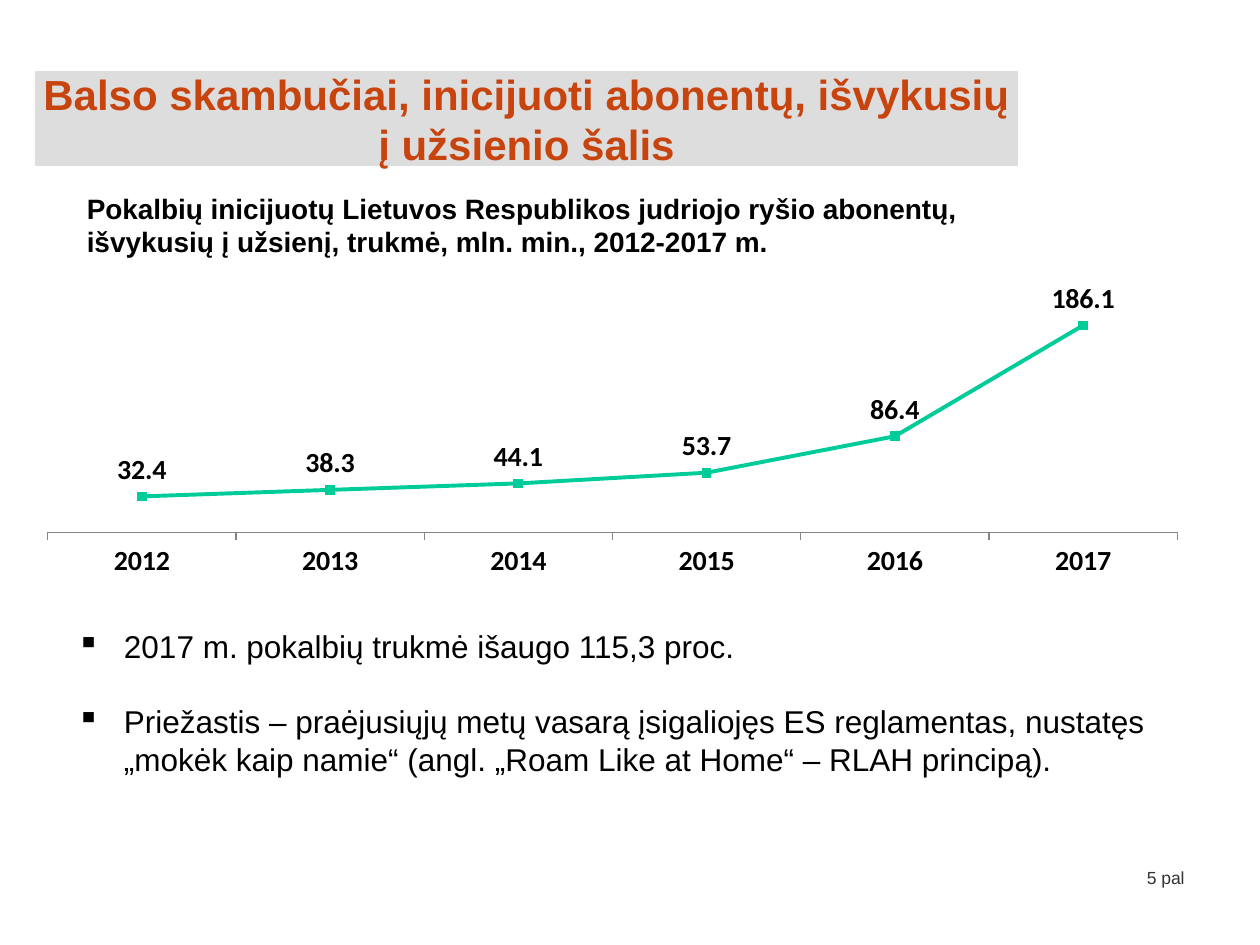
from dataclasses import dataclass

from lxml import etree
from pptx import Presentation
from pptx import util as u
from pptx.chart.data import CategoryChartData
from pptx.dml.color import RGBColor
from pptx.enum import chart as ch, shapes, text
from pptx.oxml.ns import qn

COLORS = {
    "text": "000000",
    "title": "C7440F",
    "band": "DDDDDD",
    "page": "323232",
    "line": "00CC99",
    "axis": "868686",
}
INDENT = u.Cm(0.95)


@dataclass
class TextBlock:
    box: tuple[float, float, float, float]  # left, top, width, height in cm
    lines: list[str]
    size: int
    color: str = "text"
    bold: bool = False
    align: text.PP_ALIGN = text.PP_ALIGN.LEFT
    bullet: str = ""
    gap: float = 0  # points between paragraphs
    band: bool = False


def rgb(name: str) -> RGBColor:
    return RGBColor.from_string(COLORS[name])


def add_bullet(p, char: str) -> None:
    pPr = p._p.get_or_add_pPr()
    pPr.set("marL", str(INDENT))
    pPr.set("indent", str(-INDENT))
    etree.SubElement(pPr, qn("a:buChar")).set("char", char)


def add_block(s, block: TextBlock) -> None:
    box = [u.Cm(v) for v in block.box]
    if block.band:
        sp = s.shapes.add_shape(shapes.MSO_SHAPE.RECTANGLE, *box)
        sp.shadow.inherit = False
        sp.fill.solid()
        sp.fill.fore_color.rgb = rgb("band")
        sp.line.color.rgb = rgb("band")
        sp.line.width = u.Pt(0.75)
        sp.text_frame.margin_left = sp.text_frame.margin_right = 0
        sp.text_frame.vertical_anchor = text.MSO_ANCHOR.MIDDLE
    else:
        sp = s.shapes.add_textbox(*box)
    tf = sp.text_frame
    tf.word_wrap = True
    tf.text = "\n".join(block.lines)
    for i, p in enumerate(tf.paragraphs):
        p.alignment = block.align
        if i and block.gap:
            p.space_before = u.Pt(block.gap)
        if block.bullet:
            add_bullet(p, block.bullet)
        for r in p.runs:
            r.font.name = "Arial"
            r.font.size = u.Pt(block.size)
            r.font.bold = block.bold
            r.font.color.rgb = rgb(block.color)


def set_plot_area(chart, **fractions: float) -> None:
    """Fix the inner plot area as fractions of the chart frame."""
    area = chart._chartSpace.chart.plotArea
    for old in area.findall(qn("c:layout")):
        area.remove(old)
    layout = etree.Element(qn("c:layout"))
    area.insert(0, layout)
    manual = etree.SubElement(layout, qn("c:manualLayout"))
    values = {"layoutTarget": "inner", "xMode": "edge", "yMode": "edge", **fractions}
    for tag, value in values.items():
        etree.SubElement(manual, qn(f"c:{tag}")).set("val", str(value))


def add_duration_chart(s) -> None:
    data = CategoryChartData(number_format="#,##0.0")
    data.categories = [str(year) for year in range(2012, 2018)]
    data.add_series("Series 1", (32.4, 38.3, 44.1, 53.7, 86.4, 186.1))
    box = [u.Cm(v) for v in (0.61, 5.69, 23.5, 6.43)]
    chart = s.shapes.add_chart(ch.XL_CHART_TYPE.LINE_MARKERS, *box, data).chart
    chart.has_legend = False
    chart.has_title = False
    chart.font.name = "Calibri"
    chart.font.size = u.Pt(16)
    chart.font.bold = True
    chart.font.color.rgb = rgb("text")
    set_plot_area(chart, x=0.015, y=0.043, w=0.969, h=0.74)

    # Axes
    chart.value_axis.visible = False
    chart.value_axis.has_major_gridlines = False
    chart.value_axis.minimum_scale = 0
    chart.value_axis.maximum_scale = 210
    chart.category_axis.major_tick_mark = ch.XL_TICK_MARK.OUTSIDE
    chart.category_axis.format.line.color.rgb = rgb("axis")
    chart.category_axis.format.line.width = u.Pt(0.75)

    # Line, markers and value labels
    plot = chart.plots[0]
    plot.vary_by_categories = False
    series = plot.series[0]
    series.smooth = False
    series.format.line.color.rgb = rgb("line")
    series.format.line.width = u.Pt(2.25)
    series.marker.style = ch.XL_MARKER_STYLE.SQUARE
    series.marker.size = 5
    series.marker.format.fill.solid()
    series.marker.format.fill.fore_color.rgb = rgb("line")
    series.marker.format.line.color.rgb = rgb("line")
    labels = series.data_labels
    labels.show_value = True
    labels.position = ch.XL_LABEL_POSITION.ABOVE
    labels.number_format = "#,##0.0"
    labels.number_format_is_linked = False


PAGE = TextBlock((22.43, 17.35, 1.7, 0.64), ["5 pal"], 10, "page",
                 align=text.PP_ALIGN.RIGHT)
FINDINGS = TextBlock(
    (1.3, 12.52, 22.2, 5.64),
    ["2017 m. pokalbių trukmė išaugo 115,3 proc.",
     "Priežastis – praėjusiųjų metų vasarą įsigaliojęs ES reglamentas, nustatęs "
     "„mokėk kaip namie“ (angl. „Roam Like at Home“ – RLAH principą)."],
    18, bullet="▪", gap=21)
TITLE = TextBlock(
    (0.71, 1.45, 19.81, 1.88),
    ["Balso skambučiai, inicijuoti abonentų, išvykusių į užsienio šalis"],
    24, "title", bold=True, align=text.PP_ALIGN.CENTER, band=True)
CHART_TITLE = TextBlock(
    (1.5, 3.73, 19.81, 1.63),
    ["Pokalbių inicijuotų Lietuvos Respublikos judriojo ryšio abonentų, "
     "išvykusių į užsienį, trukmė, mln. min., 2012-2017 m."],
    16, bold=True)


def main() -> None:
    prs = Presentation()
    prs.slide_width, prs.slide_height = u.Cm(25.4), u.Cm(19.05)
    s = prs.slides.add_slide(prs.slide_layouts[6])
    for block in (PAGE, FINDINGS, TITLE):
        add_block(s, block)
    add_duration_chart(s)
    add_block(s, CHART_TITLE)
    prs.save("out.pptx")


if __name__ == "__main__":
    main()
